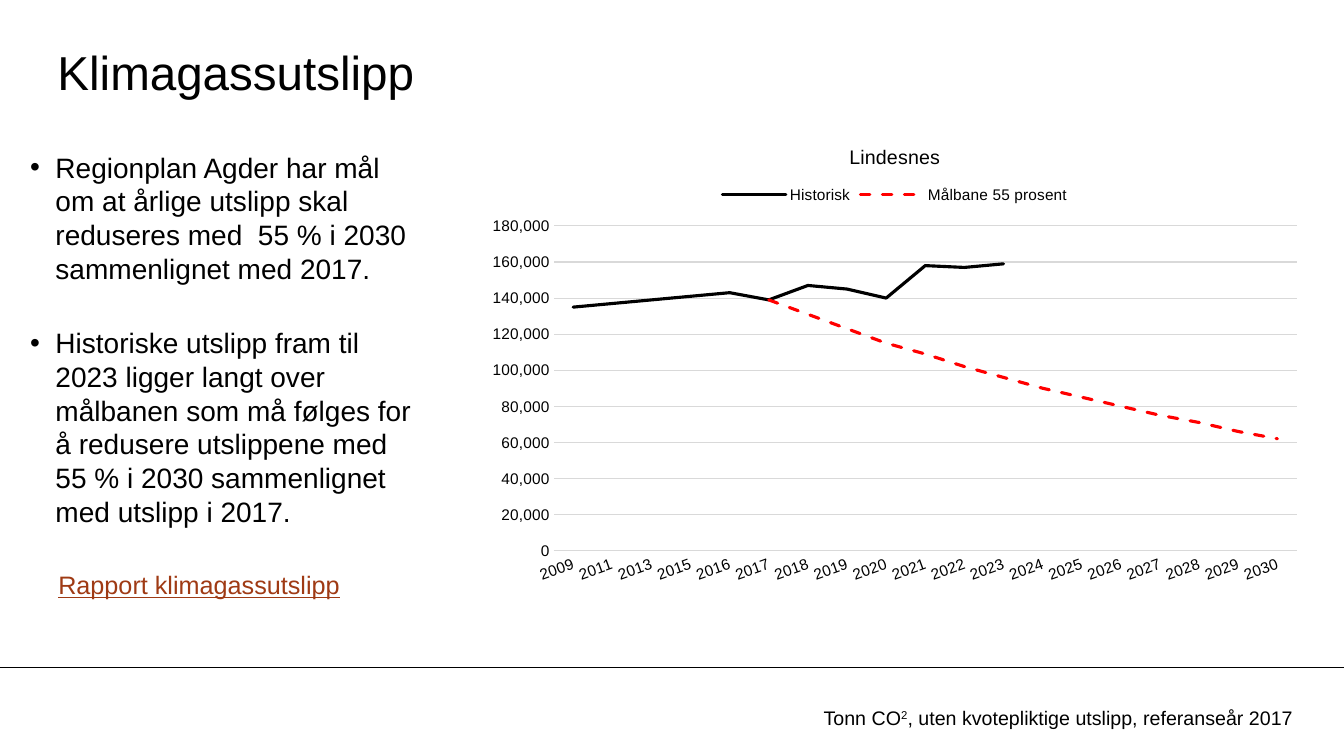
from lxml import etree
from pptx import Presentation
from pptx.chart.data import CategoryChartData
from pptx.dml.color import RGBColor
from pptx.enum.chart import XL_CHART_TYPE, XL_LEGEND_POSITION, XL_TICK_MARK
from pptx.enum.dml import MSO_LINE
from pptx.enum.shapes import MSO_CONNECTOR
from pptx.enum.text import MSO_ANCHOR, PP_ALIGN
from pptx.oxml.ns import qn
from pptx.util import Inches, Pt

LINE = XL_CHART_TYPE.LINE
TOP = XL_LEGEND_POSITION.TOP
NONE = XL_TICK_MARK.NONE
DASH = MSO_LINE.DASH
STRAIGHT = MSO_CONNECTOR.STRAIGHT
MIDDLE = MSO_ANCHOR.MIDDLE
LEFT = PP_ALIGN.LEFT
BLACK, RED, GREY, RUST = "000000", "FF0000", "D9D9D9", "9F3A14"


def paint(hue):
    return RGBColor.from_string(hue)


def style(font, size, hue=BLACK):
    font.name = "Arial"
    font.size = Pt(size)
    font.bold = False
    font.color.rgb = paint(hue)


deck = Presentation()
deck.slide_width, deck.slide_height = Inches(13.33), Inches(7.5)
wide = deck.slide_width
slide = deck.slides.add_slide(deck.slide_layouts[5])
shapes = slide.shapes

rule = shapes.add_connector(STRAIGHT, 0, Inches(6.62), wide, Inches(6.62))
rule.line.color.rgb = paint(BLACK)
rule.line.width = Pt(0.75)
etree.SubElement(rule._element.spPr, qn("a:effectLst"))

title = shapes.title
title.left, title.top = Inches(0.57), Inches(0.33)
title.width, title.height = Inches(11.1), Inches(0.75)
head = title.text_frame
head.text = "Klimagassutslipp"
head.vertical_anchor = MIDDLE
head.paragraphs[0].alignment = LEFT
style(head.paragraphs[0].font, 34)

body = shapes.add_textbox(Inches(0.3), Inches(1.49), Inches(3.89), Inches(3.81)).text_frame
body.word_wrap = True
for frame in (head, body):
    frame.margin_left = frame.margin_right = 0
    frame.margin_top = frame.margin_bottom = 0

points = [
    "Regionplan Agder har mål om at årlige utslipp skal reduseres med  55 % i 2030 sammenlignet med 2017.",
    "Historiske utslipp fram til 2023 ligger langt over målbanen som må følges for å redusere utslippene "
    "med 55 % i 2030 sammenlignet med utslipp i 2017.",
]
for i, text in enumerate(points):
    para = body.add_paragraph() if i else body.paragraphs[0]
    para.text = text
    para.line_spacing = 1.0
    if i:
        para.space_before = Pt(29.5)
    props = para._p.get_or_add_pPr()
    props.set("marL", str(Inches(0.25)))
    props.set("indent", str(-Inches(0.25)))
    etree.SubElement(props, qn("a:buFont")).set("typeface", "Arial")
    etree.SubElement(props, qn("a:buChar")).set("char", "•")
    style(para.font, 20)

note = shapes.add_textbox(Inches(8.07), Inches(6.95), Inches(5.09), Inches(0.34)).text_frame
note.word_wrap = True
para = note.paragraphs[0]
for text, lift in (("Tonn CO", 0), ("2", 30000), (", uten kvotepliktige utslipp, referanseår 2017", 0)):
    run = para.add_run()
    run.text = text
    if lift:
        run._r.get_or_add_rPr().set("baseline", str(lift))
style(para.font, 14)

link = shapes.add_textbox(Inches(0.48), Inches(5.6), Inches(3.16), Inches(0.4)).text_frame
link.word_wrap = True
link.text = "Rapport klimagassutslipp"
style(link.paragraphs[0].font, 18, RUST)
link.paragraphs[0].font.underline = True

past = [135, 137, 139, 141, 143, 139, 147, 145, 140, 158, 157, 159]
goal = [139, 131, 123, 115, 109, 102, 96, 90, 85, 80, 75, 71, 66, 62]
years = [2009, 2011, 2013, *range(2015, 2031)]
gap = len(years) - len(goal)
data = CategoryChartData(number_format="#,##0")
data.categories = [str(year) for year in years]
data.add_series("Historisk", [n * 1000 for n in past] + [None] * (len(years) - len(past)))
data.add_series("Målbane 55 prosent", [None] * gap + [n * 1000 for n in goal])
chart = shapes.add_chart(LINE, Inches(4.72), Inches(1.25), Inches(8.31), Inches(4.63), data).chart
style(chart.font, 10)

chart.has_title = True
chart.chart_title.include_in_layout = False
name = chart.chart_title.text_frame
name.text = "Lindesnes"
style(name.paragraphs[0].font, 14)

chart.has_legend = True
chart.legend.position = TOP
chart.legend.include_in_layout = False
style(chart.legend.font, 11)

chart.plots[0].vary_by_categories = False
for row, hue in zip(chart.plots[0].series, (BLACK, RED)):
    row.smooth = False
    row.format.line.color.rgb = paint(hue)
    row.format.line.width = Pt(2.25)
    if hue == RED:
        row.format.line.dash_style = DASH
    row.format.line._ln.set("cap", "rnd")

cats, vals = chart.category_axis, chart.value_axis
for axis in (cats, vals):
    axis.major_tick_mark = axis.minor_tick_mark = NONE
    style(axis.tick_labels.font, 11)
turn = cats._element.find(qn("c:txPr")).find(qn("a:bodyPr"))
turn.set("rot", str(-20 * 60000))
turn.set("vert", "horz")
vals.tick_labels.number_format = "#,##0"
vals.tick_labels.number_format_is_linked = False
vals.minimum_scale, vals.maximum_scale, vals.major_unit = 0, 180000, 20000
vals.format.line.fill.background()
for line in (cats.format.line, vals.major_gridlines.format.line):
    line.color.rgb = paint(GREY)
    line.width = Pt(0.75)

deck.save("out.pptx")
